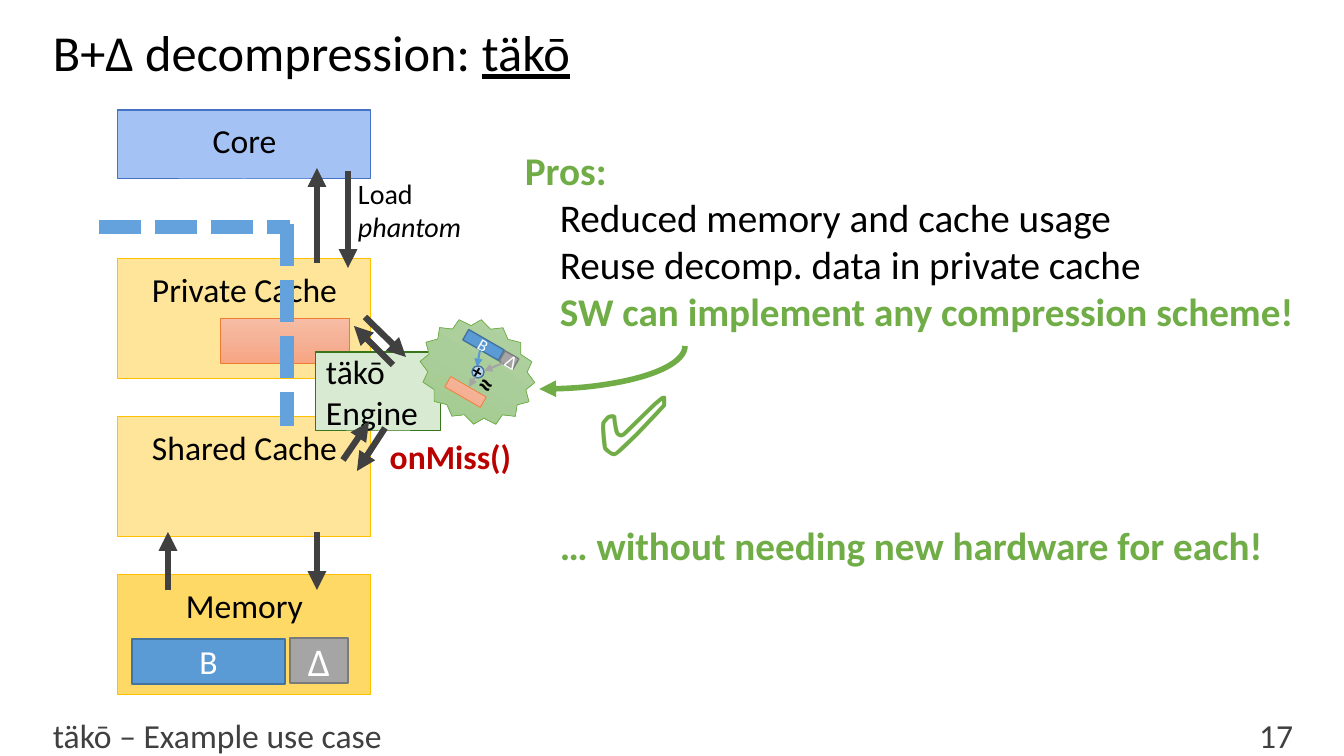
from lxml import etree
from pptx import Presentation
from pptx import util as u
from pptx.dml.color import RGBColor
from pptx.enum import dml, shapes, text
from pptx.oxml import parse_xml
from pptx.oxml.ns import nsdecls, qn

PX = 914400 / 100.8
COLORS = {
    "black": "000000", "white": "FFFFFF", "dark": "404040", "green": "70AD47",
    "red": "BB0000", "core": "A4C2F4", "core_line": "4472C4", "cache": "FFE599",
    "gold": "FFC000", "memory": "FFD966", "base": "5B9BD5", "base_line": "43739E",
    "delta": "A5A5A5", "delta_line": "7A7A7A", "orange": "ED7D31",
    "engine": "D9EAD3", "engine_line": "38761D", "boundary": "64A2DE", "adder": "BDD7EE",
}
GRADIENTS = {
    "pink": ("F7BDA5", "F5B196", "F8A582"),
    "leaf": ("B5D5A7", "AACE9A", "9CC987"),
}
KINDS = {
    "rect": shapes.MSO_SHAPE.RECTANGLE, "star": shapes.MSO_SHAPE.STAR_16_POINT,
    "ellipse": shapes.MSO_SHAPE.OVAL, "arc": shapes.MSO_SHAPE.ARC,
}
ALIGN = {"left": text.PP_ALIGN.LEFT, "center": text.PP_ALIGN.CENTER, "right": text.PP_ALIGN.RIGHT}
BASE = {"fill": "base", "line": ("base_line", 1), "align": "center", "middle": True}
DELTA = {"fill": "delta", "line": ("delta_line", 1), "align": "center", "middle": True}
PINK = {"fill": "pink", "line": ("orange", 0.5)}
LEVEL = {"line": ("gold", 0.75), "inset": 10, "align": "center"}
GREEN = {"color": "green", "bold": True}
MIDDLE = {"middle": True}


def run(words, size=24, color="black", **look):
    return words, size, color, look


def box(kind, at, *paragraphs, **style):
    return {"kind": kind, "at": at, "paragraphs": paragraphs, **style}


def arrow(start, end, color="dark", width=4.5, **style):
    return {"kind": "line", "start": start, "end": end, "line": (color, width), "head": True, **style}


def level(index, name, fill):
    return box("rect", (118, 259 + 158 * index, 253, 120), [run(name)], fill=fill, **LEVEL)


def boundary(start, end):
    return arrow(start, end, "boundary", 10) | {"head": False, "dash": True}


MAIN = [
    box("text", (348, 166, 129, 89), [run("Load", 20)], [run("phantom", 20, italic=True)], inset=10),
    box("rect", (118, 110, 253, 69), [run("Core")], fill="core",
        **LEVEL | {"line": ("core_line", 0.75)}),
    box("text", (43, 12, 1260, 86), [run("B+Δ decompression: ", 36), run("täkō", 36, underline=True)],
        spacing=0.9, **MIDDLE),
    box("text", (1220, 715, 83, 41), [run("17", color="dark")], align="right", **MIDDLE),
    level(0, "Private Cache", "cache"),
    arrow((317, 263), (317, 168)),
    arrow((348, 171), (348, 268)),
    level(1, "Shared Cache", "cache"),
    level(2, "Memory", "memory"),
    box("text", (515, 141, 807, 437),
        [run("Pros:", 28, **GREEN)],
        [run("Reduced memory and cache usage", 28)],
        [run("Reuse decomp. data in private cache", 28)],
        [run("SW can implement any compression scheme!", 28, **GREEN)],
        [run("… without needing new hardware for each!", 28, **GREEN)],
        indents=(0, 35, 35, 35, 35), gaps=(0, 0, 0, 0, 134)),
    box("text", (588, 367, 115, 112), [run("✅", 60, "green", name="Roboto")]),
    box("text", (362, 426, 177, 61), [run("onMiss()", color="red", bold=True)],
        inset=10, align="center"),
    box("arc", (498, 202, 86, 288), rotation=90, adjust=(162, 1.39), line=("green", 4), head=True),
    box("rect", (220, 318, 129, 45), **PINK),
    box("rect", (316, 352, 125, 79), [run("täkō"), run("\n"), run("Engine")],
        fill="engine", line=("engine_line", 0.75), inset=10, **MIDDLE),
    boundary((287, 224), (287, 426)),
    boundary((99, 227), (290, 227)),
]
CALLBACK = [
    box("star", (418, 321, 119, 102), rotation=30, adjust=(0.435,), fill="leaf", line=("green", 0.5)),
    box("rect", (463, 339, 41, 12), [run("B", 12, "white")], rotation=30, key="small base", **BASE),
    box("rect", (501, 354, 16, 12), [run("Δ", 14, "white")], rotation=30, **DELTA),
    box("rect", (445, 386, 41, 12), rotation=30, key="small result", **PINK),
    arrow((480, 350), (477, 367), "base", 1.5, begin=("small base", 2)),
    box("ellipse", (472, 366, 12, 12), rotation=30, fill="adder", line=("base_line", 1)),
    arrow((503, 363), (484, 371), "delta", 1.5),
    arrow((475, 377), (469, 387), "delta", 1.5, finish=("small result", 0)),
    box("text", (466, 354, 25, 24), [run("+", 14, bold=True)], rotation=30),
    box("text", (470, 362, 33, 44), [run("≈", 20, bold=True)], rotation=32),
]
TRANSFERS = [
    arrow((317, 532), (317, 590)),
    arrow((168, 590), (168, 532)),
]
COMPRESSED = [
    box("rect", (132, 639, 153, 45), [run("B", color="white")], **BASE),
    box("rect", (290, 638, 58, 45), [run("Δ", 28, "white")], **DELTA),
]
FRONT = [
    arrow((385, 428), (357, 471)),
    arrow((343, 460), (369, 422)),
    arrow((365, 317), (406, 357)),
    arrow((393, 365), (354, 326)),
    box("text", (43, 715, 1145, 40), [run("täkō – Example use case", color="dark")], **MIDDLE),
]
LAYERS = [(MAIN, False), (CALLBACK, True), (TRANSFERS, False), (COMPRESSED, True), (FRONT, False)]


def px(value):
    return u.Emu(round(value * PX))


def rgb(name):
    return RGBColor.from_string(COLORS[name])


def paint(shape, name):
    if name in GRADIENTS:
        stops = "".join(f'<a:gs pos="{i * 50000}"><a:srgbClr val="{color}"/></a:gs>'
                        for i, color in enumerate(GRADIENTS[name]))
        gradient = parse_xml(f'<a:gradFill {nsdecls("a")}><a:gsLst>{stops}</a:gsLst>'
                             '<a:lin ang="5400000" scaled="0"/></a:gradFill>')
        shape._element.spPr.find(qn("a:prstGeom")).addnext(gradient)
    elif name:
        shape.fill.solid()
        shape.fill.fore_color.rgb = rgb(name)
    else:
        shape.fill.background()


def draw_line(shape, item):
    color, width = item["line"]
    shape.line.color.rgb = rgb(color)
    shape.line.width = u.Pt(width)
    if item.get("dash"):
        shape.line.dash_style = dml.MSO_LINE.SQUARE_DOT
    if item.get("head"):
        outline = shape._element.spPr.find(qn("a:ln"))
        etree.SubElement(outline, qn("a:tailEnd"), type="triangle")


def write(shape, item):
    frame = shape.text_frame
    frame.word_wrap = True
    frame.vertical_anchor = text.MSO_ANCHOR.MIDDLE if item.get("middle") else text.MSO_ANCHOR.TOP
    if "inset" in item:
        for side in ("left", "top", "right", "bottom"):
            setattr(frame, f"margin_{side}", px(item["inset"]))
    for index, runs in enumerate(item["paragraphs"]):
        paragraph = frame.add_paragraph() if index else frame.paragraphs[0]
        paragraph.alignment = ALIGN[item.get("align", "left")]
        if "spacing" in item:
            paragraph.line_spacing = item["spacing"]
        if "indents" in item:
            paragraph._p.get_or_add_pPr().set("marL", str(px(item["indents"][index])))
            paragraph.space_before = u.Pt(item["gaps"][index])
        for words, size, color, look in runs:
            if words == "\n":
                paragraph.add_line_break()
                continue
            piece = paragraph.add_run()
            piece.text = words
            for name, value in ({"name": "Calibri", "size": u.Pt(size)} | look).items():
                setattr(piece.font, name, value)
            piece.font.color.rgb = rgb(color)


def add_line(container, item, named):
    ends = [px(value) for value in (*item["start"], *item["end"])]
    connector = container.add_connector(shapes.MSO_CONNECTOR.STRAIGHT, *ends)
    if "begin" in item:
        key, site = item["begin"]
        connector.begin_connect(named[key], site)
    if "finish" in item:
        key, site = item["finish"]
        connector.end_connect(named[key], site)
    for name, value in zip(("begin_x", "begin_y", "end_x", "end_y"), ends):
        setattr(connector, name, value)
    draw_line(connector, item)
    etree.SubElement(connector._element.spPr, qn("a:effectLst"))


def add_box(container, item, named):
    place = [px(value) for value in item["at"]]
    if item["kind"] == "text":
        shape = container.add_textbox(*place)
    else:
        shape = container.add_shape(KINDS[item["kind"]], *place)
        shape.shadow.inherit = False
        for index, value in enumerate(item.get("adjust", ())):
            shape.adjustments[index] = value
        paint(shape, item.get("fill"))
        draw_line(shape, item)
    shape.rotation = item.get("rotation", 0)
    if item["paragraphs"]:
        write(shape, item)
    if "key" in item:
        named[item["key"]] = shape


def main():
    presentation = Presentation()
    presentation.slide_width, presentation.slide_height = px(1344), px(756)
    slide = presentation.slides.add_slide(presentation.slide_layouts[6])
    named = {}
    for items, grouped in LAYERS:
        container = slide.shapes.add_group_shape().shapes if grouped else slide.shapes
        for item in items:
            add = add_line if item["kind"] == "line" else add_box
            add(container, item, named)
    presentation.save("out.pptx")


if __name__ == "__main__":
    main()
